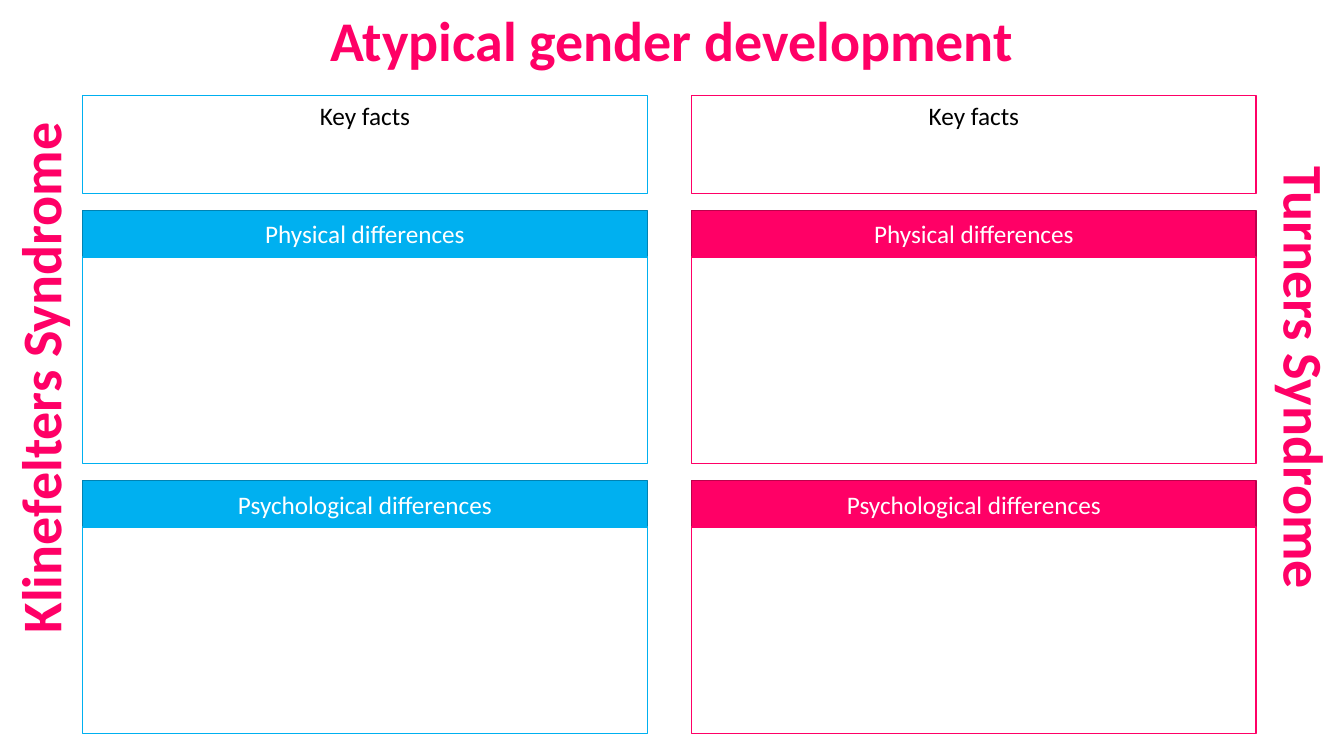
import pptx
import pptx.util
import pptx.dml.color
import pptx.enum.shapes
import pptx.enum.text
from dataclasses import dataclass

Inches = pptx.util.Inches
ALIGN = pptx.enum.text.PP_ALIGN
ANCHOR = pptx.enum.text.MSO_ANCHOR


@dataclass(frozen=True)
class Theme:
    font: str = "Calibri"
    heading_size: int = 40
    label_size: int = 18
    outline: int = 1
    pink: str = "FF0066"
    pink_edge: str = "BD004B"
    blue: str = "00B0F0"
    blue_edge: str = "0082B2"
    white: str = "FFFFFF"
    black: str = "000000"


THEME = Theme()
SLIDE_W, SLIDE_H = 13.33, 7.5

# Column grid
HEADING_H = 0.77
COLUMN_TOP, COLUMN_W, COLUMN_H = 0.95, 5.6, 6.33
COLUMN_LEFT, COLUMN_STEP = 0.82, 6.04
FACTS_H, BAND_H, BODY_H, ROW_GAP = 0.97, 0.46, 2.05, 0.17

SECTIONS = ("Physical differences", "Psychological differences")
# Side heading, rotation, centre of heading, fill, band edge
SYNDROMES = (
    ("Klinefelters Syndrome", 270, 0.39, THEME.blue, THEME.blue_edge),
    ("Turners Syndrome", 90, 12.95, THEME.pink, THEME.pink_edge),
)


def rgb(value):
    return pptx.dml.color.RGBColor.from_string(value)


def write(frame, text, size, color, bold=False, anchor=ANCHOR.TOP):
    for name, value in {"word_wrap": True, "vertical_anchor": anchor}.items():
        setattr(frame, name, value)
    paragraph = frame.paragraphs[0]
    paragraph.alignment = ALIGN.CENTER
    run = paragraph.add_run()
    run.text = text
    formats = {"name": THEME.font, "size": pptx.util.Pt(size), "bold": bold}
    for name, value in formats.items():
        setattr(run.font, name, value)
    run.font.color.rgb = rgb(color)


def add_heading(slide, box, text, rotation=0):
    heading = slide.shapes.add_textbox(*map(Inches, box))
    heading.rotation = rotation
    write(heading.text_frame, text, THEME.heading_size, THEME.pink, bold=True)


def add_panel(slide, box, fill, edge):
    panel = slide.shapes.add_shape(
        pptx.enum.shapes.MSO_SHAPE.RECTANGLE, *map(Inches, box))
    panel.shadow.inherit = False
    panel.fill.solid()
    panel.fill.fore_color.rgb = rgb(fill)
    panel.line.color.rgb = rgb(edge)
    panel.line.width = pptx.util.Pt(THEME.outline)
    return panel


def add_section(slide, box, title, fill, edge):
    left, top, width, height = box
    band = add_panel(slide, (left, top, width, BAND_H), fill, edge)
    write(band.text_frame, title, THEME.label_size, THEME.white,
          anchor=ANCHOR.MIDDLE)
    add_panel(slide, (left, top + BAND_H, width, height - BAND_H),
              THEME.white, fill)


def add_syndrome_column(slide, box, fill, edge):
    left, top, width, height = box
    # Titled sections fill the column below the key facts
    section_h = (height - FACTS_H) / len(SECTIONS) - ROW_GAP
    for row, title in enumerate(SECTIONS):
        section_top = top + FACTS_H + ROW_GAP + row * (section_h + ROW_GAP)
        add_section(slide, (left, section_top, width, section_h),
                    title, fill, edge)
    # Key facts
    facts = add_panel(slide, (left, top, width, FACTS_H), THEME.white, fill)
    write(facts.text_frame, "Key facts", THEME.label_size, THEME.black)


def add_comparison_slide(presentation):
    slide = presentation.slides.add_slide(presentation.slide_layouts[6])
    add_heading(slide, (0, 0.01, SLIDE_W, HEADING_H),
                "Atypical gender development")
    for column, (name, rotation, centre, fill, edge) in enumerate(SYNDROMES):
        left = COLUMN_LEFT + column * COLUMN_STEP
        add_syndrome_column(slide, (left, COLUMN_TOP, COLUMN_W, COLUMN_H),
                            fill, edge)
        # Side heading turned about its centre, running the slide's height
        heading_box = (centre - SLIDE_H / 2, (SLIDE_H - HEADING_H) / 2,
                       SLIDE_H, HEADING_H)
        add_heading(slide, heading_box, name, rotation)


def main():
    presentation = pptx.Presentation()
    presentation.slide_width = Inches(SLIDE_W)
    presentation.slide_height = Inches(SLIDE_H)
    add_comparison_slide(presentation)
    presentation.save("out.pptx")


if __name__ == "__main__":
    main()
